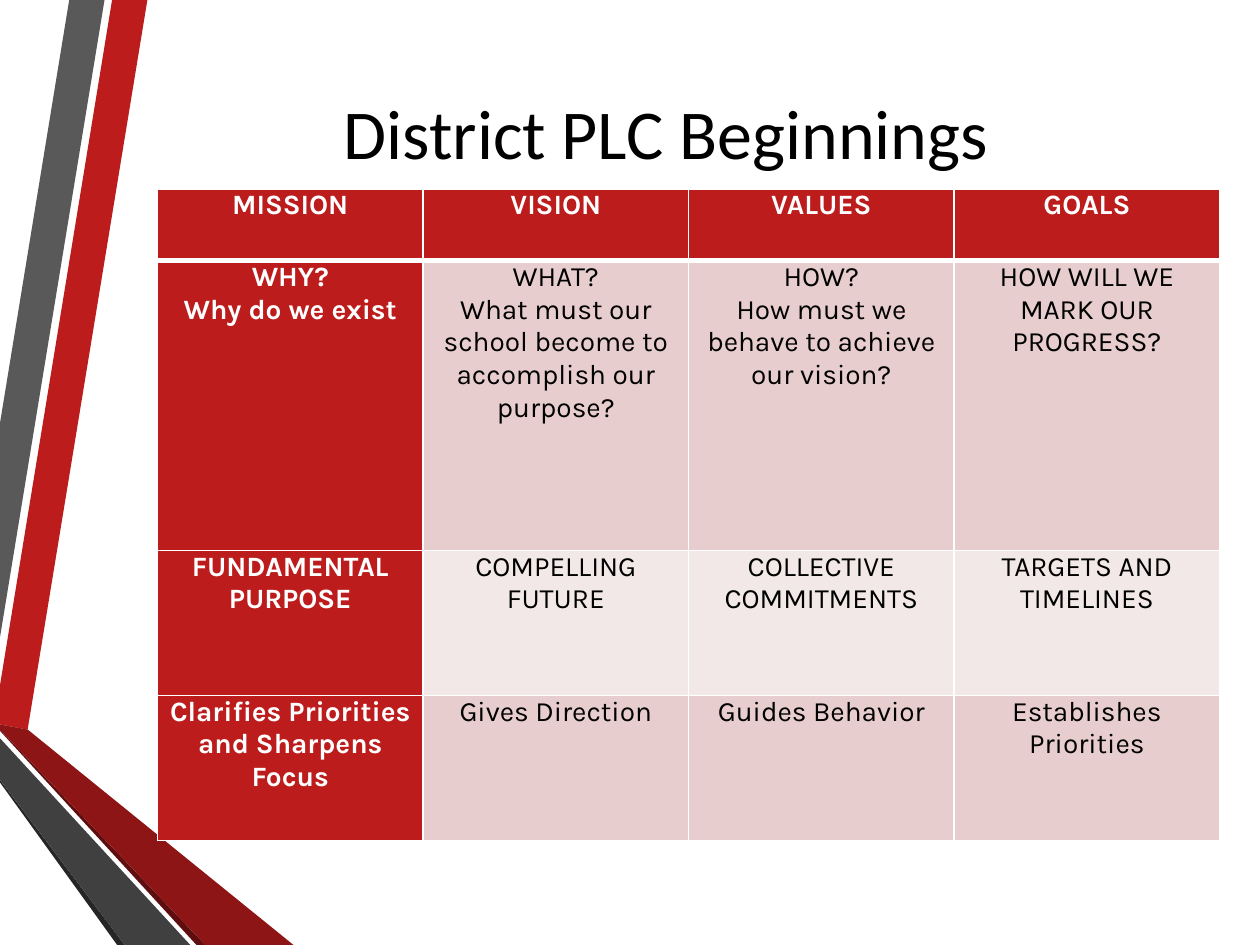
from lxml import etree
from pptx import Presentation
from pptx.dml.color import RGBColor
from pptx.enum.text import MSO_ANCHOR, PP_ALIGN
from pptx.oxml.ns import qn
from pptx.util import Inches, Pt

COLORS = {
    "red": "BC1C1C", "grey": "595959", "black": "000000", "white": "FFFFFF",
    "charcoal": "262626", "maroon": "5E0E0E", "dark_red": "8D1515",
    "dark_grey": "404040", "rose": "E7CDCD", "blush": "F3E8E8",
}
TITLE = "District PLC Beginnings"
RIBBONS = [
    ("red", [(0, 5.44), (0, 5.75), (0.22, 5.79), (1.17, 0), (0.89, 0)]),
    ("grey", [(0.83, 0), (0.55, 0), (0, 3.36), (0, 5.06)]),
    ("charcoal", [(0, 6.19), (0, 6.21), (0.93, 7.5), (0.99, 7.5)]),
    ("maroon", [(0, 5.79), (0, 5.8), (1.56, 7.5), (1.63, 7.5)]),
    ("dark_red", [(0, 5.79), (1.63, 7.5), (2.33, 7.5), (0.22, 5.79), (0, 5.75)]),
    ("dark_grey", [(0, 6.19), (0.99, 7.5), (1.51, 7.5), (0, 5.86)]),
]
ROWS = [
    (0.57, [["MISSION"], ["VISION"], ["VALUES"], ["GOALS"]]),
    (2.3, [
        ["WHY?", "Why do we exist"],
        ["WHAT?", "What must our school become to accomplish our purpose?"],
        ["HOW?", "How must we behave to achieve our vision?"],
        ["HOW WILL WE MARK OUR PROGRESS?"],
    ]),
    (1.15, [["FUNDAMENTAL PURPOSE"], ["COMPELLING FUTURE"],
            ["COLLECTIVE COMMITMENTS"], ["TARGETS AND TIMELINES"]]),
    (1.15, [["Clarifies Priorities and Sharpens Focus"], ["Gives Direction"],
            ["Guides Behavior"], ["Establishes Priorities"]]),
]


def color(name):
    return RGBColor.from_string(COLORS[name])


def add_text(para, text, font, size, ink, bold=False):
    para.alignment = PP_ALIGN.CENTER
    span = para.add_run()
    span.text = text
    span.font.name = font
    span.font.size = Pt(size)
    span.font.bold = bold
    span.font.color.rgb = color(ink)


def add_ribbon(page, fill, points):
    corners = [(Inches(x), Inches(y)) for x, y in points]
    builder = page.shapes.build_freeform(*corners[0])
    builder.add_line_segments(corners[1:], close=True)
    ribbon = builder.convert_to_shape()
    ribbon.shadow.inherit = False
    ribbon.fill.solid()
    ribbon.fill.fore_color.rgb = color(fill)
    ribbon.line.fill.background()


def set_borders(cell, widths):
    properties = cell._tc.get_or_add_tcPr()
    for index, (side, width) in enumerate(widths.items()):
        line = etree.Element(qn(f"a:ln{side}"), w=str(Pt(width)))
        fill = etree.SubElement(line, qn("a:solidFill"))
        etree.SubElement(fill, qn("a:srgbClr"), val=COLORS["white"])
        properties.insert(index, line)


def fill_cell(cell, row, column, lines):
    heading = row == 0 or column == 0
    cell.margin_left = cell.margin_right = Inches(0.08)
    cell.margin_top = cell.margin_bottom = 0
    cell.fill.solid()
    cell.fill.fore_color.rgb = color("red" if heading else "rose" if row % 2 else "blush")
    frame = cell.text_frame
    for index, text in enumerate(lines):
        para = frame.add_paragraph() if index else frame.paragraphs[0]
        add_text(para, text, "Karla", 16, "white" if heading else "black", heading)
    set_borders(cell, {"L": 1, "R": 1, "T": 3 if row == 1 else 1, "B": 3 if row == 0 else 1})


def main():
    deck = Presentation()
    deck.slide_width, deck.slide_height = Inches(10), Inches(7.5)
    page = deck.slides.add_slide(deck.slide_layouts[5])

    for fill, points in RIBBONS:
        add_ribbon(page, fill, points)

    title = page.shapes.title
    title.left, title.top = Inches(1.07), Inches(0.5)
    title.width, title.height = Inches(8.43), Inches(1.08)
    title.text_frame.vertical_anchor = MSO_ANCHOR.MIDDLE
    add_text(title.text_frame.paragraphs[0], TITLE, "Calibri", 40, "black")

    columns = len(ROWS[0][1])
    height = sum(row_height for row_height, _ in ROWS)
    table = page.shapes.add_table(len(ROWS), columns, Inches(1.25), Inches(1.5),
                                  Inches(8.43), Inches(height)).table
    for row, (row_height, cells) in enumerate(ROWS):
        table.rows[row].height = Inches(row_height)
        for column, lines in enumerate(cells):
            fill_cell(table.cell(row, column), row, column, lines)

    deck.save("out.pptx")


if __name__ == "__main__":
    main()
